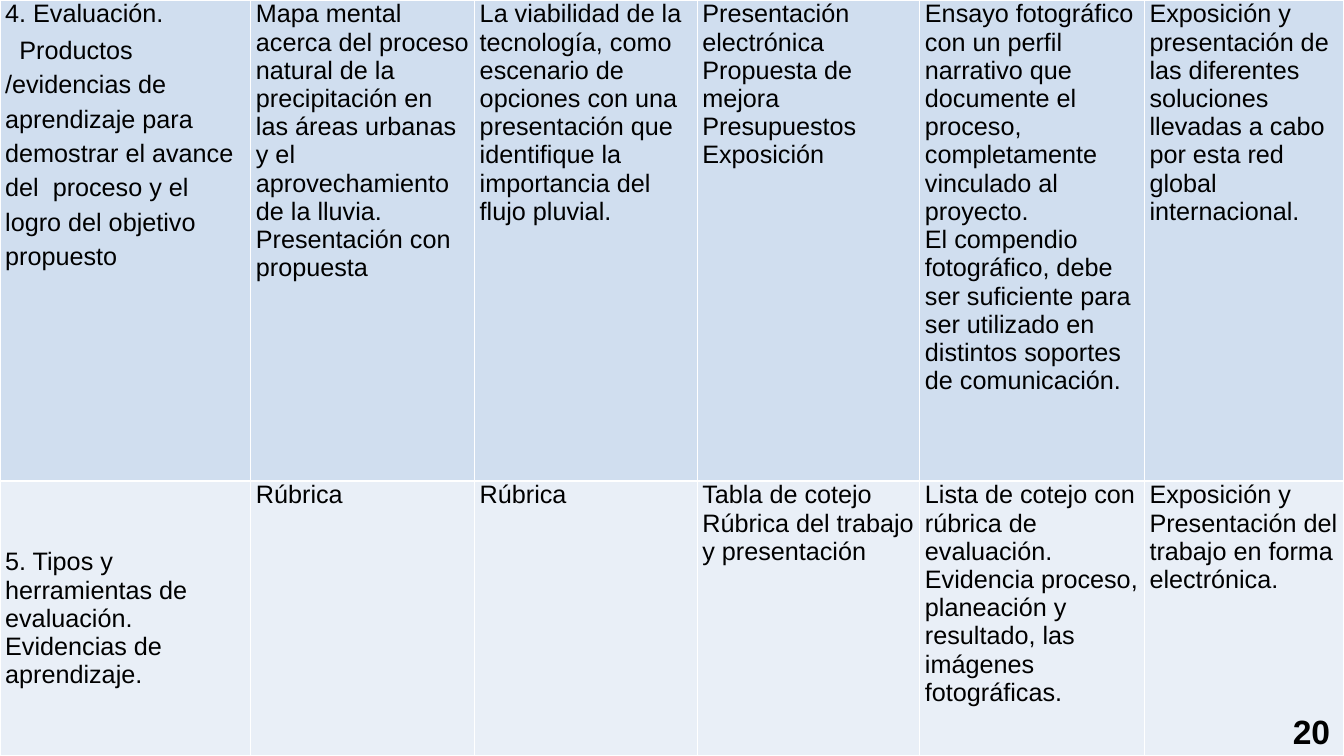
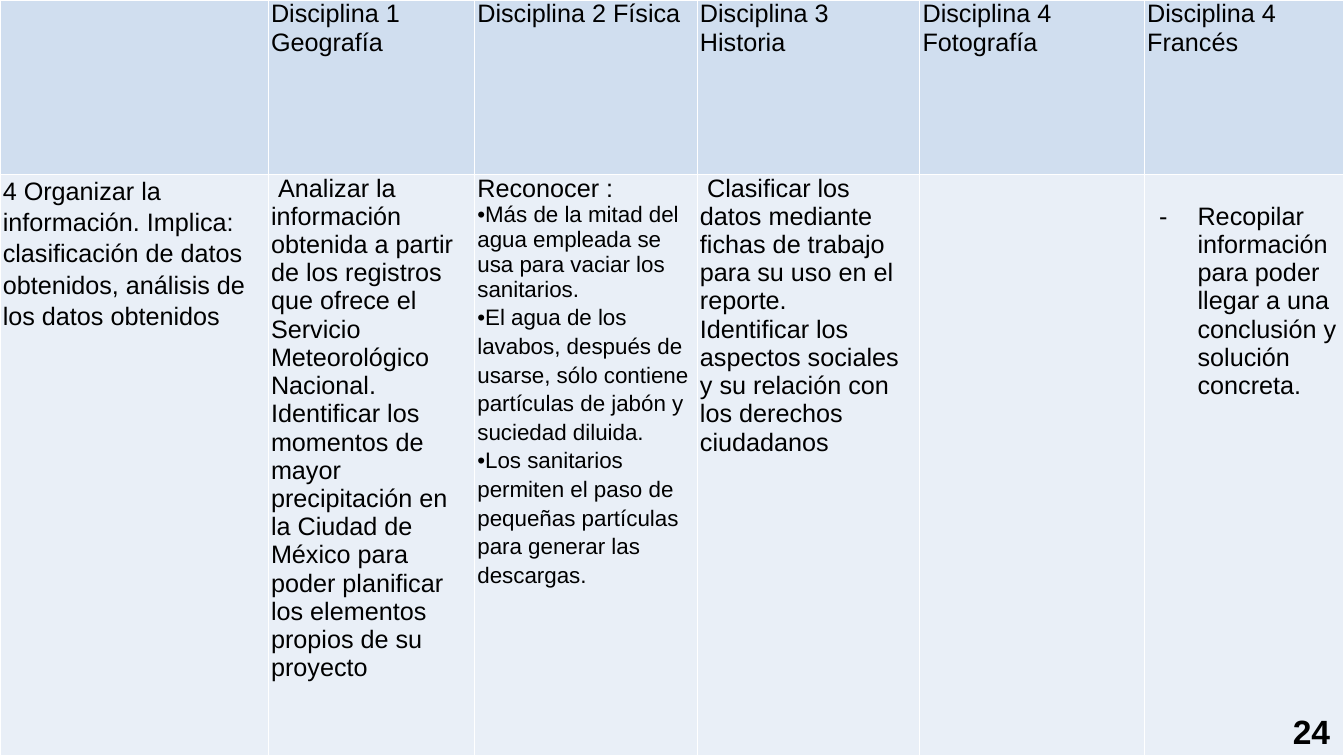
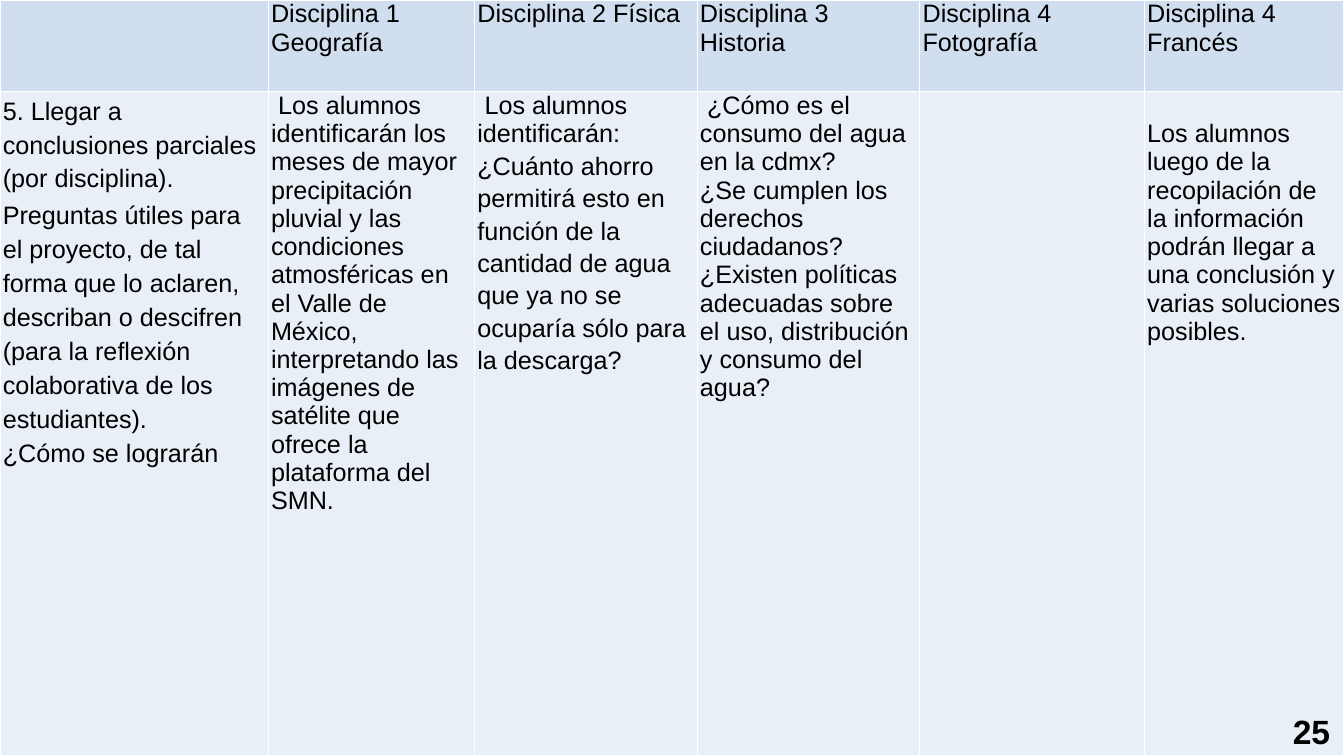
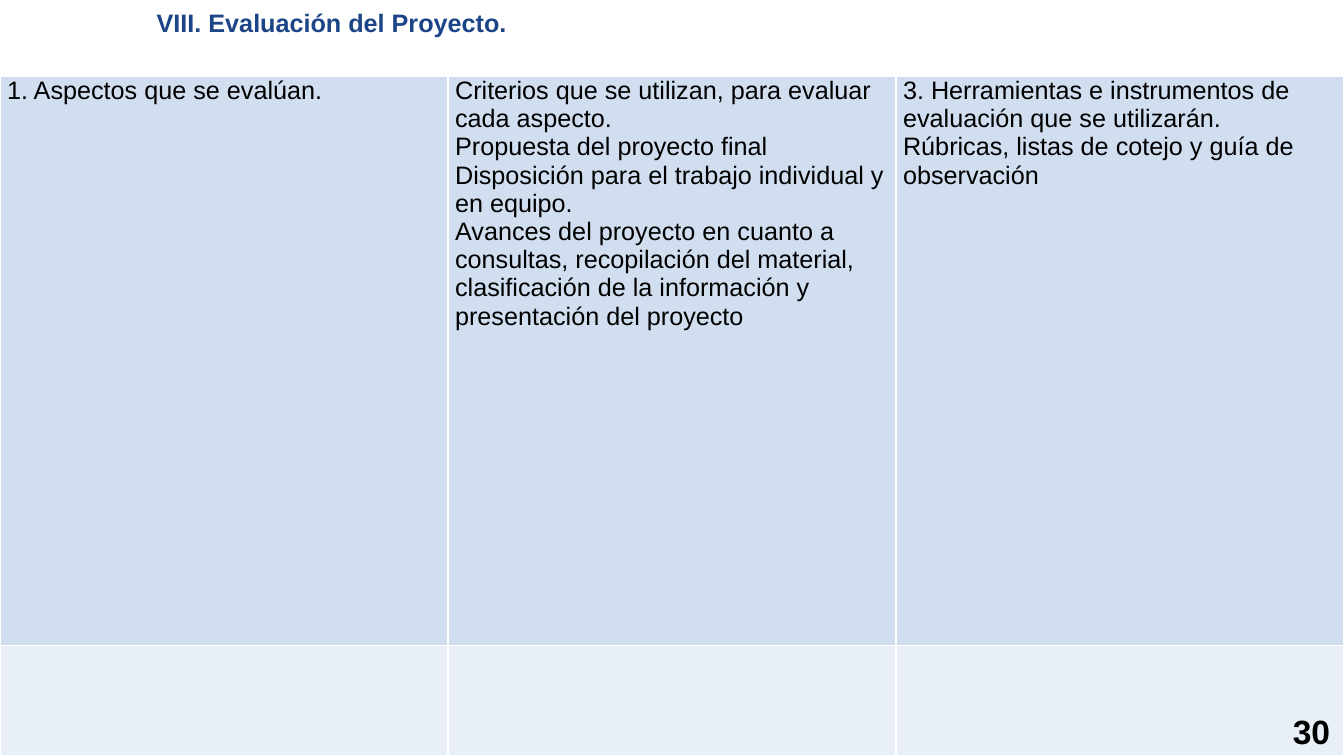
from dataclasses import dataclass

import lxml.etree
import pptx
import pptx.dml.color
import pptx.enum.text
import pptx.oxml.ns
import pptx.util
from pptx.util import Cm, Pt

# Shared style
COLORS = {"text": "000000", "title": "1C4587", "band": "D0DEEF",
          "light": "E9EFF7", "border": "FFFFFF"}
FONT = "Arial"
SLIDE_WIDTH, SLIDE_HEIGHT = 33.87, 19.05
BORDER_WIDTH = Pt(1)
MIDDLE = pptx.enum.text.MSO_ANCHOR.MIDDLE
TOP = pptx.enum.text.MSO_ANCHOR.TOP


@dataclass
class Para:
    """A paragraph; lengths in cm, sizes and spacing in points."""
    text: str
    size: float = 18
    line_spacing: float | None = None
    space_before: float | None = None
    left: float = 0
    first_line: float = 0
    bullet: str = ""
    tab_stop: float = 0
    bold: bool = False
    color: str = "text"


@dataclass
class Cell:
    paragraphs: list[str | Para]
    anchor: pptx.enum.text.MSO_ANCHOR = TOP
    margin_top: float = 0


@dataclass
class TableSlide:
    number: int
    columns: list[float]
    row_heights: list[float]
    rows: list[list[Cell]]
    side_margin: float
    top: float = 0
    title: str = ""


def rgb(name: str) -> pptx.dml.color.RGBColor:
    return pptx.dml.color.RGBColor.from_string(COLORS[name])


def add_xml(parent, tag: str, **attributes: str):
    return lxml.etree.SubElement(parent, pptx.oxml.ns.qn(tag), attributes)


# Text
def write_paragraph(paragraph, content: Para) -> None:
    paragraph.text = content.text
    properties = paragraph._p.get_or_add_pPr()
    properties.set("marL", str(Cm(content.left)))
    properties.set("indent", str(Cm(content.first_line)))
    if content.bullet:
        add_xml(properties, "a:buFont", typeface=FONT)
        add_xml(properties, "a:buChar", char=content.bullet)
    if content.tab_stop:
        tabs = add_xml(properties, "a:tabLst")
        add_xml(tabs, "a:tab", pos=str(Cm(content.tab_stop)), algn="l")
    if content.line_spacing:
        paragraph.line_spacing = content.line_spacing
    if content.space_before:
        paragraph.space_before = Pt(content.space_before)
    paragraph.font.name = FONT
    paragraph.font.size = Pt(content.size)
    paragraph.font.bold = content.bold
    paragraph.font.color.rgb = rgb(content.color)


def write_text(frame, paragraphs: list[str | Para]) -> None:
    for index, item in enumerate(paragraphs):
        paragraph = frame.add_paragraph() if index else frame.paragraphs[0]
        write_paragraph(paragraph, Para(item) if isinstance(item, str) else item)


def add_text_box(slide, left: float, top: float, width: float, height: float,
                 content: Para, margin_top: float = 0.13) -> None:
    box = slide.shapes.add_textbox(Cm(left), Cm(top), Cm(width), Cm(height))
    box.text_frame.word_wrap = True
    box.text_frame.margin_top = Cm(margin_top)
    write_text(box.text_frame, [content])


# Table
def add_borders(cell) -> None:
    properties = cell._tc.get_or_add_tcPr()
    for side in ("a:lnL", "a:lnR", "a:lnT", "a:lnB"):
        line = add_xml(properties, side, w=str(BORDER_WIDTH))
        add_xml(add_xml(line, "a:solidFill"), "a:srgbClr", val=COLORS["border"])


def add_table(slide, content: TableSlide) -> None:
    table = slide.shapes.add_table(
        len(content.rows), len(content.columns), Cm(0), Cm(content.top),
        Cm(sum(content.columns)), Cm(sum(content.row_heights))).table
    table.first_row = table.horz_banding = False
    for column, width in zip(table.columns, content.columns):
        column.width = Cm(width)
    for row, height in zip(table.rows, content.row_heights):
        row.height = Cm(height)
    for row_index, row_cells in enumerate(content.rows):
        for column_index, source in enumerate(row_cells):
            cell = table.cell(row_index, column_index)
            add_borders(cell)
            cell.fill.solid()
            cell.fill.fore_color.rgb = rgb("light" if row_index else "band")
            cell.margin_left = cell.margin_right = Cm(content.side_margin)
            cell.margin_top, cell.margin_bottom = Cm(source.margin_top), Cm(0)
            cell.vertical_anchor = source.anchor
            write_text(cell.text_frame, source.paragraphs)


def add_table_slide(presentation, content: TableSlide) -> None:
    slide = presentation.slides.add_slide(presentation.slide_layouts[6])
    add_table(slide, content)
    if content.title:
        add_text_box(slide, 3.7, 0, 9.42, 1.8,
                     Para(content.title, bold=True, color="title"), 0.19)
    add_text_box(slide, 32.33, 17.78, 1.52, 1.27,
                 Para(str(content.number), size=24, bold=True))


# Content
EMPTY = Cell([])
NARROW_MARGIN = 0.07
SMALL_INDENT = 0.18
LINE_HEIGHT = 0.71
DISCIPLINE_COLUMNS = [6.76, 5.2, 5.61, 5.61, 5.66, 5.03]
DISCIPLINES = [EMPTY] + [Cell([name]) for name in (
    "Disciplina 1 Geografía", "Disciplina 2 Física", "Disciplina 3 Historia",
    "Disciplina 4 Fotografía", "Disciplina 4 Francés")]

SLIDES = [
    TableSlide(
        number=20,
        columns=[6.32, 5.64, 5.61, 5.61, 5.66, 5.03],
        row_heights=[12.12, 6.93],
        side_margin=0.13,
        rows=[
            [
                Cell(["4. Evaluación.",
                      Para("Productos /evidencias de aprendizaje para demostrar el "
                           "avance del  proceso y el logro del objetivo\tpropuesto",
                           line_spacing=1.22, space_before=1.5,
                           first_line=2 * SMALL_INDENT, tab_stop=3.1)]),
                Cell(["Mapa mental acerca del proceso natural de la precipitación en "
                      "las áreas urbanas y el aprovechamiento de la lluvia.",
                      "Presentación con propuesta"]),
                Cell(["La viabilidad de la tecnología, como escenario de opciones con "
                      "una presentación que identifique la importancia del flujo "
                      "pluvial."]),
                Cell(["Presentación electrónica", "Propuesta de mejora",
                      "Presupuestos", "Exposición"]),
                Cell(["Ensayo fotográfico con un perfil narrativo que documente el "
                      "proceso, completamente vinculado al proyecto.",
                      "El compendio fotográfico, debe ser suficiente para ser "
                      "utilizado en distintos soportes de comunicación."]),
                Cell(["Exposición y presentación de las diferentes soluciones "
                      "llevadas a cabo por esta red global internacional."]),
            ],
            [
                Cell(["5. Tipos y herramientas de evaluación. Evidencias de "
                      "aprendizaje."], anchor=MIDDLE),
                Cell(["Rúbrica"]),
                Cell(["Rúbrica"]),
                Cell(["Tabla de cotejo", "Rúbrica del trabajo y presentación"]),
                Cell(["Lista de cotejo con rúbrica de evaluación.",
                      "Evidencia proceso, planeación y resultado, las imágenes "
                      "fotográficas."]),
                Cell(["Exposición y Presentación del trabajo en forma electrónica."]),
            ],
        ]),
    TableSlide(
        number=24,
        columns=DISCIPLINE_COLUMNS,
        row_heights=[4.39, 14.66],
        side_margin=NARROW_MARGIN,
        rows=[
            DISCIPLINES,
            [
                Cell([Para("4 Organizar la información. Implica: clasificación de "
                           "datos obtenidos, análisis de los datos obtenidos",
                           line_spacing=1.11)]),
                Cell([Para("Analizar la información obtenida a partir de los registros "
                           "que ofrece el Servicio Meteorológico Nacional. Identificar "
                           "los momentos de mayor precipitación en la Ciudad de México "
                           "para poder planificar los elementos propios de su proyecto",
                           first_line=SMALL_INDENT)]),
                Cell(["Reconocer :",
                      Para("Más de la mitad del agua empleada se usa para vaciar los "
                           "sanitarios.", size=16, bullet="•"),
                      Para("El agua de los lavabos, después de usarse, sólo contiene "
                           "partículas de jabón y suciedad diluida.",
                           size=16, bullet="•", line_spacing=1.15),
                      Para("Los sanitarios permiten el paso de pequeñas partículas "
                           "para generar las descargas.",
                           size=16, bullet="•", line_spacing=1.15)]),
                Cell([Para("Clasificar los datos mediante fichas de trabajo para su "
                           "uso en el reporte.", first_line=SMALL_INDENT),
                      "Identificar los aspectos sociales y su relación con los "
                      "derechos ciudadanos"]),
                EMPTY,
                Cell([Para("Recopilar información para poder llegar a una conclusión "
                           "y solución concreta.",
                           left=1.27, first_line=-0.97, bullet="-")],
                     margin_top=LINE_HEIGHT),
            ],
        ]),
    TableSlide(
        number=25,
        columns=DISCIPLINE_COLUMNS,
        row_heights=[2.31, 16.74],
        side_margin=NARROW_MARGIN,
        rows=[
            DISCIPLINES,
            [
                Cell([Para("5. Llegar a conclusiones parciales (por disciplina).",
                           line_spacing=1.2),
                      Para("Preguntas útiles para el proyecto, de tal forma que lo "
                           "aclaren, describan o descifren (para la reflexión "
                           "colaborativa de los estudiantes).",
                           line_spacing=1.21, space_before=1.6),
                      Para("¿Cómo se lograrán", line_spacing=1.11, space_before=1.6)]),
                Cell([Para("Los alumnos identificarán los meses de mayor precipitación "
                           "pluvial y las condiciones atmosféricas en el Valle de "
                           "México, interpretando las imágenes de satélite que ofrece "
                           "la plataforma del SMN.", first_line=SMALL_INDENT)]),
                Cell([Para("Los alumnos identificarán:", first_line=SMALL_INDENT),
                      Para("¿Cuánto ahorro permitirá esto en función de la cantidad de "
                           "agua que ya no se ocuparía sólo para la descarga?",
                           line_spacing=1.15)]),
                Cell([Para("¿Cómo es el consumo del agua en la cdmx?",
                           first_line=SMALL_INDENT),
                      "¿Se cumplen los derechos ciudadanos?",
                      "¿Existen políticas adecuadas sobre el uso, distribución y "
                      "consumo del agua?"]),
                EMPTY,
                Cell(["Los alumnos luego de la recopilación de la información podrán "
                      "llegar a una conclusión y varias soluciones posibles."],
                     margin_top=LINE_HEIGHT),
            ],
        ]),
    TableSlide(
        number=30,
        columns=[SLIDE_WIDTH / 3] * 3,
        row_heights=[14.33, 2.79],
        side_margin=0.18,
        top=1.93,
        title="VIII. Evaluación del Proyecto.",
        rows=[
            [
                Cell(["1. Aspectos que se evalúan."]),
                Cell(["Criterios que se utilizan, para evaluar cada aspecto.",
                      "Propuesta del proyecto final",
                      "Disposición para el trabajo individual y en equipo.",
                      "Avances del proyecto en cuanto a consultas, recopilación del "
                      "material, clasificación de la información y presentación del "
                      "proyecto"]),
                Cell(["3. Herramientas e instrumentos de evaluación que se "
                      "utilizarán.",
                      "Rúbricas, listas de cotejo y guía de observación"]),
            ],
            [EMPTY] * 3,
        ]),
]


def main() -> None:
    presentation = pptx.Presentation()
    presentation.slide_width = Cm(SLIDE_WIDTH)
    presentation.slide_height = Cm(SLIDE_HEIGHT)
    for content in SLIDES:
        add_table_slide(presentation, content)
    presentation.save("out.pptx")


if __name__ == "__main__":
    main()
